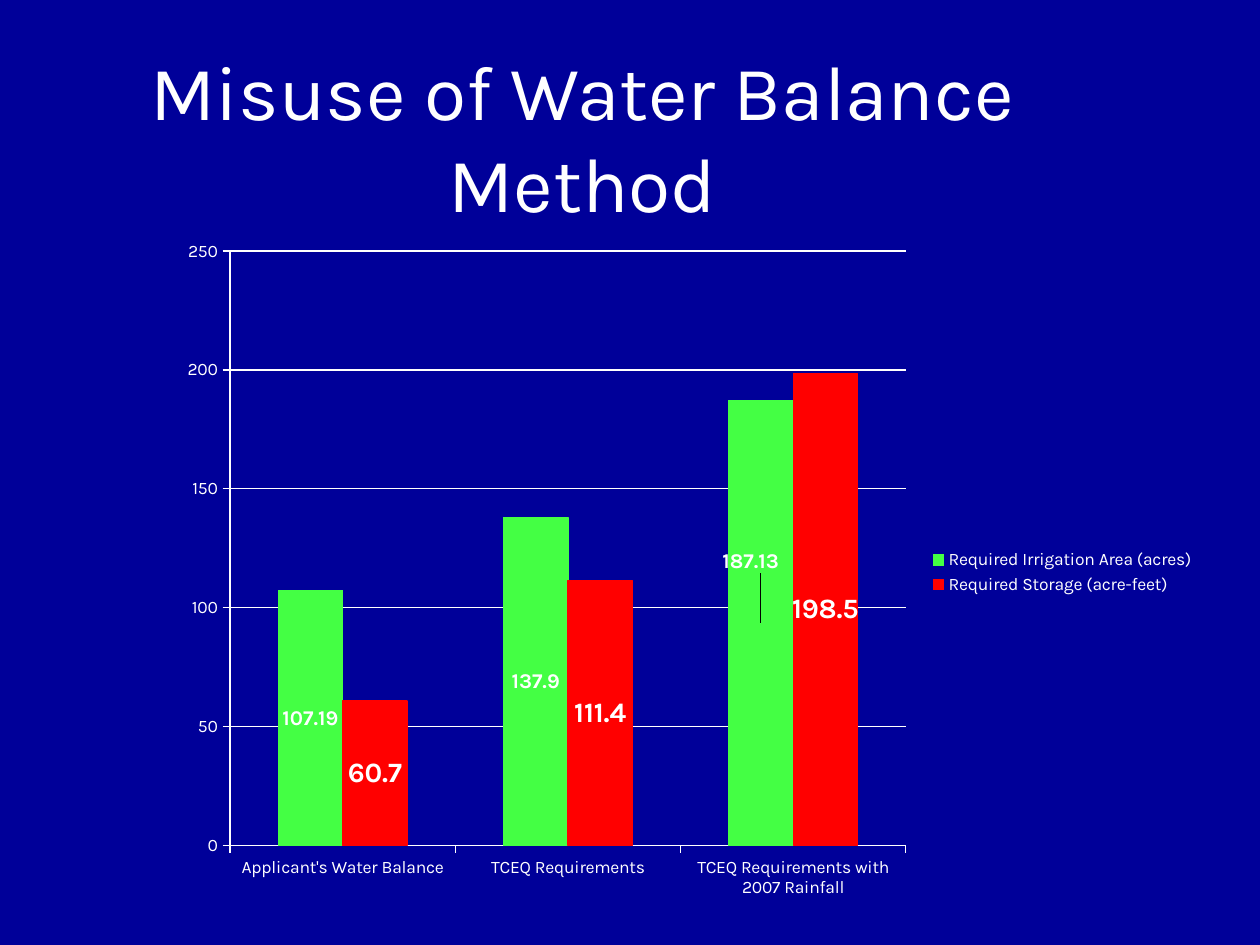
from dataclasses import dataclass

from lxml.etree import SubElement
from pptx import Presentation
from pptx.chart.data import CategoryChartData
from pptx.dml.color import RGBColor
from pptx.enum.chart import (XL_CHART_TYPE, XL_LABEL_POSITION,
                             XL_LEGEND_POSITION, XL_TICK_MARK)
from pptx.enum.text import MSO_ANCHOR, MSO_AUTO_SIZE, PP_ALIGN
from pptx.oxml.ns import qn
from pptx.util import Cm, Pt


@dataclass(frozen=True)
class Theme:
    background: RGBColor = RGBColor(0x00, 0x00, 0x99)
    text: RGBColor = RGBColor(0xFF, 0xFF, 0xFF)
    irrigation: RGBColor = RGBColor(0x44, 0xFF, 0x44)
    storage: RGBColor = RGBColor(0xFF, 0x00, 0x00)
    face: str = "Karla"
    title_size: Pt = Pt(44)
    chart_size: Pt = Pt(10)
    irrigation_label_size: Pt = Pt(12)
    storage_label_size: Pt = Pt(16)
    rule_width: Pt = Pt(0.75)


THEME = Theme()
SCENARIOS = ["Applicant's Water Balance", "TCEQ Requirements",
             "TCEQ Requirements with 2007 Rainfall"]
REQUIREMENTS = [
    ("Required Irrigation Area (acres)", (107.19, 137.9, 187.13),
     THEME.irrigation, THEME.irrigation_label_size),
    ("Required Storage (acre-feet)", (60.7, 111.4, 198.5),
     THEME.storage, THEME.storage_label_size),
]


def apply(target, formats):
    for name, value in formats.items():
        setattr(target, name, value)


def style_font(font, size, bold=False):
    apply(font, {"name": THEME.face, "size": size, "bold": bold})
    font.color.rgb = THEME.text


def style_line(line, color):
    line.color.rgb = color
    line.width = THEME.rule_width


def set_layout(parent, position, values):
    for existing in parent.findall(qn("c:layout")):
        parent.remove(existing)
    layout = SubElement(parent, qn("c:layout"))
    parent.insert(position, layout)
    manual = SubElement(layout, qn("c:manualLayout"))
    for name, value in values.items():
        SubElement(manual, qn(f"c:{name}")).set("val", str(value))


def add_title(slide, left, top, width, height):
    title = slide.shapes.title
    apply(title, {"left": left, "top": top, "width": width, "height": height})
    frame = title.text_frame
    frame.text = "Misuse of Water Balance Method"
    apply(frame, {"word_wrap": True, "auto_size": MSO_AUTO_SIZE.NONE,
                  "vertical_anchor": MSO_ANCHOR.MIDDLE})
    heading = frame.paragraphs[0]
    heading.alignment = PP_ALIGN.CENTER
    style_font(heading.runs[0].font, THEME.title_size)


def style_series(series, color, label_size):
    series.format.fill.solid()
    series.format.fill.fore_color.rgb = color
    style_line(series.format.line, color)
    series.invert_if_negative = False
    labels = series.data_labels
    apply(labels, {"show_value": True, "position": XL_LABEL_POSITION.CENTER})
    style_font(labels.font, label_size, bold=True)


def shift_label(series, index, size, x, y):
    label = series.points[index].data_label
    style_font(label.font, size, bold=True)
    label.position = XL_LABEL_POSITION.CENTER
    element = series.data_labels._element.findall(qn("c:dLbl"))[0]
    set_layout(element, 1, {"x": x, "y": y})


def add_requirements_chart(slide, left, top, width, height):
    figures = CategoryChartData()
    figures.categories = SCENARIOS
    for name, values, _, _ in REQUIREMENTS:
        figures.add_series(name, values)
    chart = slide.shapes.add_chart(XL_CHART_TYPE.COLUMN_CLUSTERED,
                                   left, top, width, height, figures).chart
    apply(chart, {"has_title": False, "has_legend": True})
    style_font(chart.font, THEME.chart_size)
    apply(chart.legend, {"position": XL_LEGEND_POSITION.RIGHT,
                         "include_in_layout": False})
    style_font(chart.legend.font, THEME.chart_size)

    for axis in (chart.category_axis, chart.value_axis):
        apply(axis, {"major_tick_mark": XL_TICK_MARK.OUTSIDE,
                     "minor_tick_mark": XL_TICK_MARK.NONE})
        style_font(axis.tick_labels.font, THEME.chart_size)
        style_line(axis.format.line, THEME.text)
    scale = chart.value_axis
    apply(scale, {"minimum_scale": 0, "maximum_scale": 250, "major_unit": 50,
                  "has_major_gridlines": True})
    style_line(scale.major_gridlines.format.line, THEME.text)

    plot = chart.plots[0]
    apply(plot, {"gap_width": 150, "overlap": 0, "vary_by_categories": False})
    for series, (_, _, color, size) in zip(plot.series, REQUIREMENTS):
        style_series(series, color, size)
    shift_label(plot.series[0], 2, THEME.irrigation_label_size, -0.01, -0.09)
    plot_area = chart._chartSpace.find(qn("c:chart")).find(qn("c:plotArea"))
    set_layout(plot_area, 0, {"layoutTarget": "inner", "xMode": "edge",
                              "yMode": "edge", "x": 0.06, "y": 0.03,
                              "w": 0.65, "h": 0.87})


def main():
    deck = Presentation()
    apply(deck, {"slide_width": Cm(25.4), "slide_height": Cm(19.05)})
    slide = deck.slides.add_slide(deck.slide_layouts[5])
    slide.background.fill.solid()
    slide.background.fill.fore_color.rgb = THEME.background
    add_title(slide, Cm(1.27), Cm(0.81), Cm(20.96), Cm(3.84))
    add_requirements_chart(slide, Cm(3.38), Cm(4.65), Cm(20.96), Cm(13.77))
    deck.save("out.pptx")


if __name__ == "__main__":
    main()
